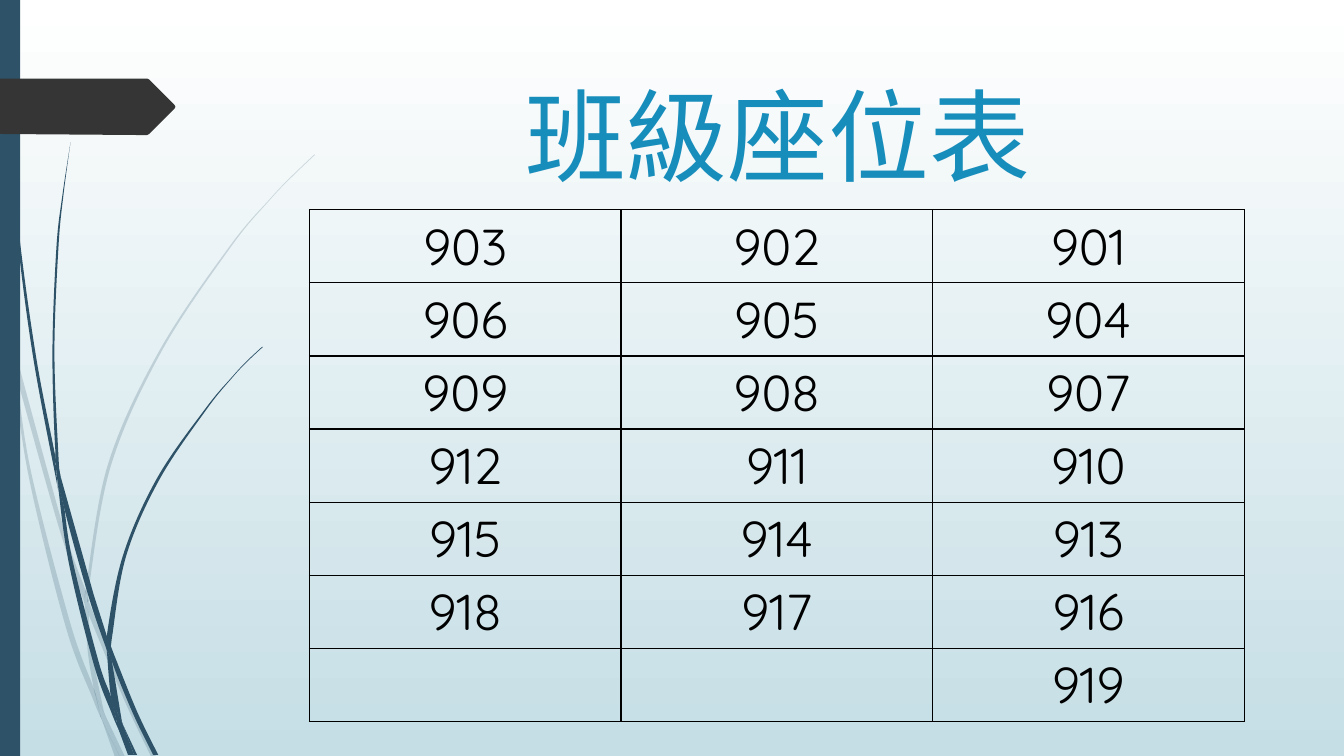
"""Build the class seating chart slide."""
from lxml import etree
from pptx import Presentation
from pptx.dml.color import RGBColor
from pptx.enum.shapes import MSO_SHAPE
from pptx.enum.text import MSO_ANCHOR, MSO_AUTO_SIZE, PP_ALIGN
from pptx.oxml.ns import qn
from pptx.util import Pt

RECTANGLE = MSO_SHAPE.RECTANGLE
CENTER, MIDDLE, NO_FIT = PP_ALIGN.CENTER, MSO_ANCHOR.MIDDLE, MSO_AUTO_SIZE.NONE
PX = 9144
COLORS = {"top": "FFFFFF", "bottom": "C5DEE5", "blade": "2E5369",
          "tag": "353535", "title": "178DBB", "ink": "000000"}
TITLE = {"text": "班級座位表", "font": "Noto Sans CJK SC", "size": 72, "color": "title"}
SEATS = {"font": "Quicksand", "size": 36, "color": "ink"}
LAST_CLASS, ROWS, COLS = 919, 7, 3

# Each blade is two smooth edges, one there and one back.
FAINT_BLADES = [
    [[(11, 350), (9, 322), (0, 282)], [(0, 299), (10, 344), (11, 348)]],
    [[(85, 586), (62, 520), (14, 345)], [(17, 376), (58, 522), (84, 599)]],
    [[(88, 610), (123, 694), (150, 751)], [(155, 751), (127, 692), (92, 607), (88, 596)]],
    [[(105, 711), (119, 751)], [(124, 751)]],
    [[(11, 350), (28, 470), (65, 621), (92, 693), (101, 714)],
     [(99, 707), (93, 683), (70, 619), (31, 469), (17, 376)]],
    [[(84, 599), (87, 646), (93, 683), (96, 692), (105, 711)],
     [(103, 706), (91, 646), (88, 610), (88, 608)]],
    [[(88, 596), (88, 584), (110, 462), (160, 349), (229, 245), (268, 198), (290, 175),
      (312, 154)],
     [(312, 153), (289, 175), (268, 197), (228, 244), (158, 348), (107, 461), (85, 584),
      (85, 586)]],
    [[(101, 714), (114, 751)], [(119, 751)]],
    [[(88, 608), (88, 610)], [(88, 596), (85, 586), (84, 599)]],
    [[(93, 683), (99, 707), (101, 714), (119, 751)], [(105, 711), (96, 692)]],
]
DARK_BLADES = [
    [[(3, 0), (4, 48), (7, 110), (17, 233), (33, 355), (56, 477), (57, 481)],
     [(55, 457), (55, 453), (36, 355), (19, 232), (8, 109), (5, 48), (4, 0)]],
    [[(60, 472), (64, 505), (88, 592), (106, 645)], [(106, 633), (106, 631), (93, 590)]],
    [[(110, 641), (111, 656), (132, 708), (152, 749)], [(157, 749), (136, 706), (113, 649)]],
    [[(57, 477), (68, 557), (93, 659), (111, 708), (117, 722)],
     [(116, 717), (110, 691), (98, 657), (72, 556), (64, 505)]],
    [[(70, 141), (62, 193), (56, 245), (52, 349), (55, 449), (60, 472)],
     [(60, 472), (58, 453), (54, 349), (58, 245), (63, 193), (70, 141)]],
    [[(122, 719), (133, 749)], [(136, 749)]],
    [[(55, 449), (55, 453), (57, 477), (64, 505)], [(60, 472)]],
    [[(111, 633), (125, 552), (158, 476), (205, 406), (231, 374), (245, 359), (261, 344)],
     [(260, 344), (245, 358), (231, 373), (204, 405), (156, 474), (122, 551), (106, 631),
      (110, 641)]],
    [[(117, 722), (127, 749)], [(131, 749)]],
    [[(106, 645), (110, 691), (116, 706), (122, 719)], [(121, 716), (111, 656), (109, 651)]],
    [[(106, 645), (109, 651), (111, 656)], [(110, 641), (106, 631), (106, 633)]],
    [[(110, 691), (116, 717), (117, 722), (130, 749)], [(133, 749), (122, 719), (116, 706)]],
]


def paint(sp, color):
    sp.shadow.inherit = False
    sp.fill.solid()
    sp.fill.fore_color.rgb = RGBColor.from_string(COLORS[color])
    sp.line.fill.background()


def write(p, text, style):
    p.alignment = CENTER
    r = p.add_run()
    r.text = text
    for name, value in {"name": style["font"], "size": Pt(style["size"]), "bold": False}.items():
        setattr(r.font, name, value)
    r.font.color.rgb = RGBColor.from_string(COLORS[style["color"]])
    ea = etree.SubElement(r.font._element, qn("a:ea"))
    ea.set("typeface", style["font"])


prs = Presentation()
prs.slide_width, prs.slide_height = 1333 * PX, 750 * PX
s = prs.slides.add_slide(prs.slide_layouts[5])

bg = s.background.fill
bg.gradient()
bg.gradient_angle = 270
for stop, color in zip(bg.gradient_stops, ("top", "bottom")):
    stop.color.rgb = RGBColor.from_string(COLORS[color])

for blades, faint in ((FAINT_BLADES, True), (DARK_BLADES, False)):
    for there, back in blades:
        points = []
        for edge in (there, back):
            if points:
                points += [points[-1], edge[0], edge[0]]
            else:
                points.append(edge[0])
            knots = [edge[0], *edge, edge[-1]]
            for a, b, c, d in zip(knots, knots[1:], knots[2:], knots[3:]):
                points.append([q + (r - o) / 6 for o, q, r in zip(a, b, c)])
                points.append([r - (u - q) / 6 for q, r, u in zip(b, c, d)])
                points.append(c)
        outline = [(round(x * PX), round(y * PX)) for x, y in points]
        builder = s.shapes.build_freeform(*outline[0])
        builder.add_line_segments(outline[1:])
        sp = builder.convert_to_shape()
        paint(sp, "blade")
        lines = list(sp._element.iter(qn("a:lnTo")))
        for i in range(0, len(outline) - 1, 3):
            curve = etree.Element(qn("a:cubicBezTo"))
            lines[i].addprevious(curve)
            for line in lines[i:i + 3]:
                curve.append(line[0])
                line.getparent().remove(line)
        if faint:
            clr = sp._element.spPr.find(".//" + qn("a:srgbClr"))
            etree.SubElement(clr, qn("a:alpha")).set("val", "20000")

sp = s.shapes.add_shape(RECTANGLE, 0, 0, 20 * PX, prs.slide_height)
paint(sp, "blade")

builder = s.shapes.build_freeform(0, 78, scale=PX)
builder.add_line_segments([(146, 78), (148, 79), (173, 104), (174, 106), (173, 108),
                           (148, 133), (146, 134), (136, 134), (0, 133)])
paint(builder.convert_to_shape(), "tag")

title = s.shapes.title
box = {"left": 284, "top": 68, "width": 975, "height": 140}
for name, value in box.items():
    setattr(title, name, value * PX)
tf = title.text_frame
frame_format = {"word_wrap": True, "auto_size": NO_FIT, "vertical_anchor": MIDDLE,
                "margin_top": 0, "margin_bottom": 10 * PX}
for name, value in frame_format.items():
    setattr(tf, name, value)
write(tf.paragraphs[0], TITLE["text"], TITLE)

frame = [v * PX for v in (307, 208, 927, 490)]
table = s.shapes.add_table(ROWS, COLS, *frame).table
table.first_row = table.horz_banding = False
for row in range(ROWS):
    for col in range(COLS):
        cell = table.cell(row, col)
        tcPr = cell._tc.get_or_add_tcPr()
        for side in ("lnL", "lnR", "lnT", "lnB"):
            ln = etree.SubElement(tcPr, qn("a:" + side), w=str(Pt(1)))
            fill = etree.SubElement(ln, qn("a:solidFill"))
            etree.SubElement(fill, qn("a:srgbClr"), val=COLORS["ink"])
        cell.fill.background()
        cell.vertical_anchor = MIDDLE
        number = 900 + COLS * (row + 1) - col
        if number <= LAST_CLASS:
            write(cell.text_frame.paragraphs[0], str(number), SEATS)

prs.save("out.pptx")
